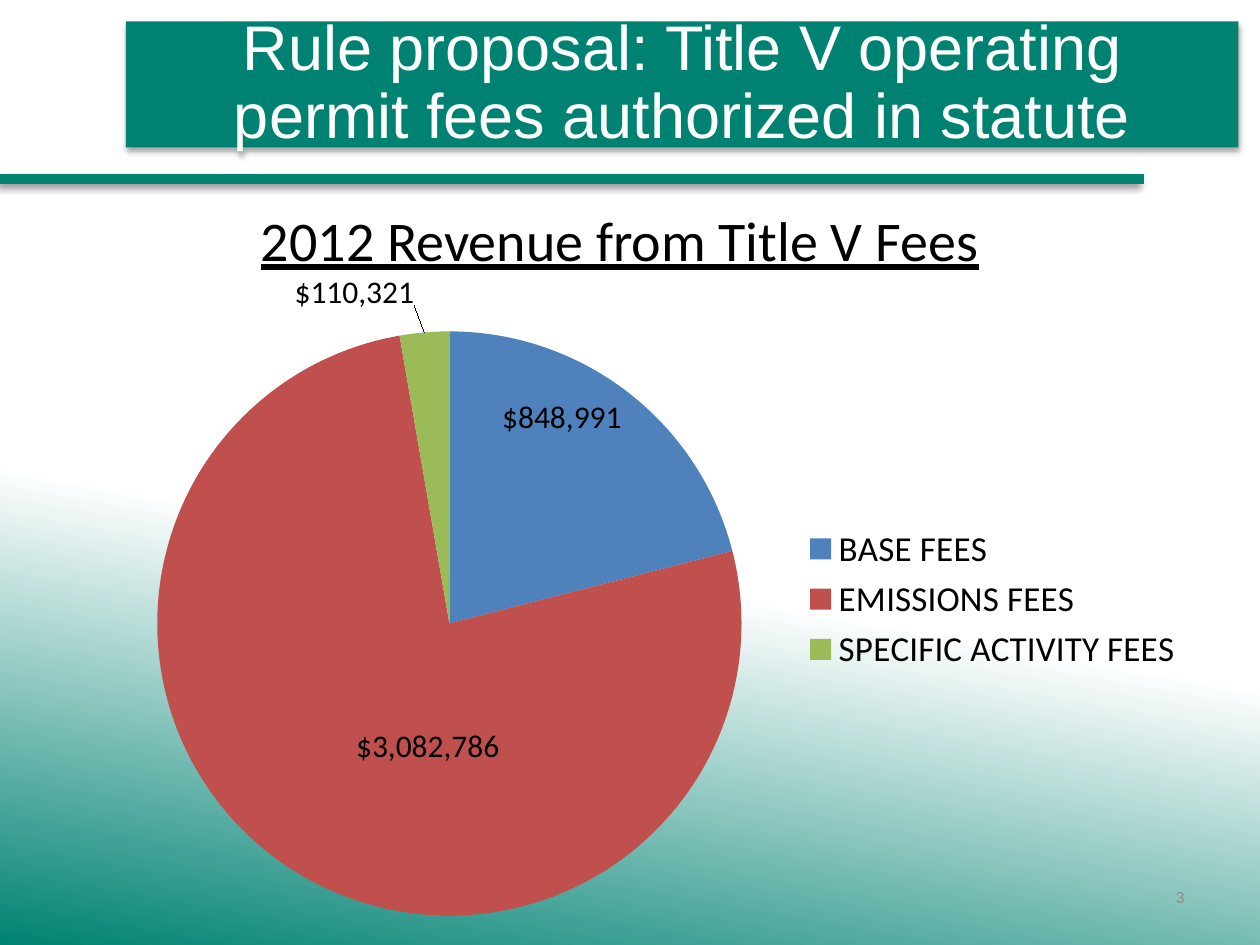
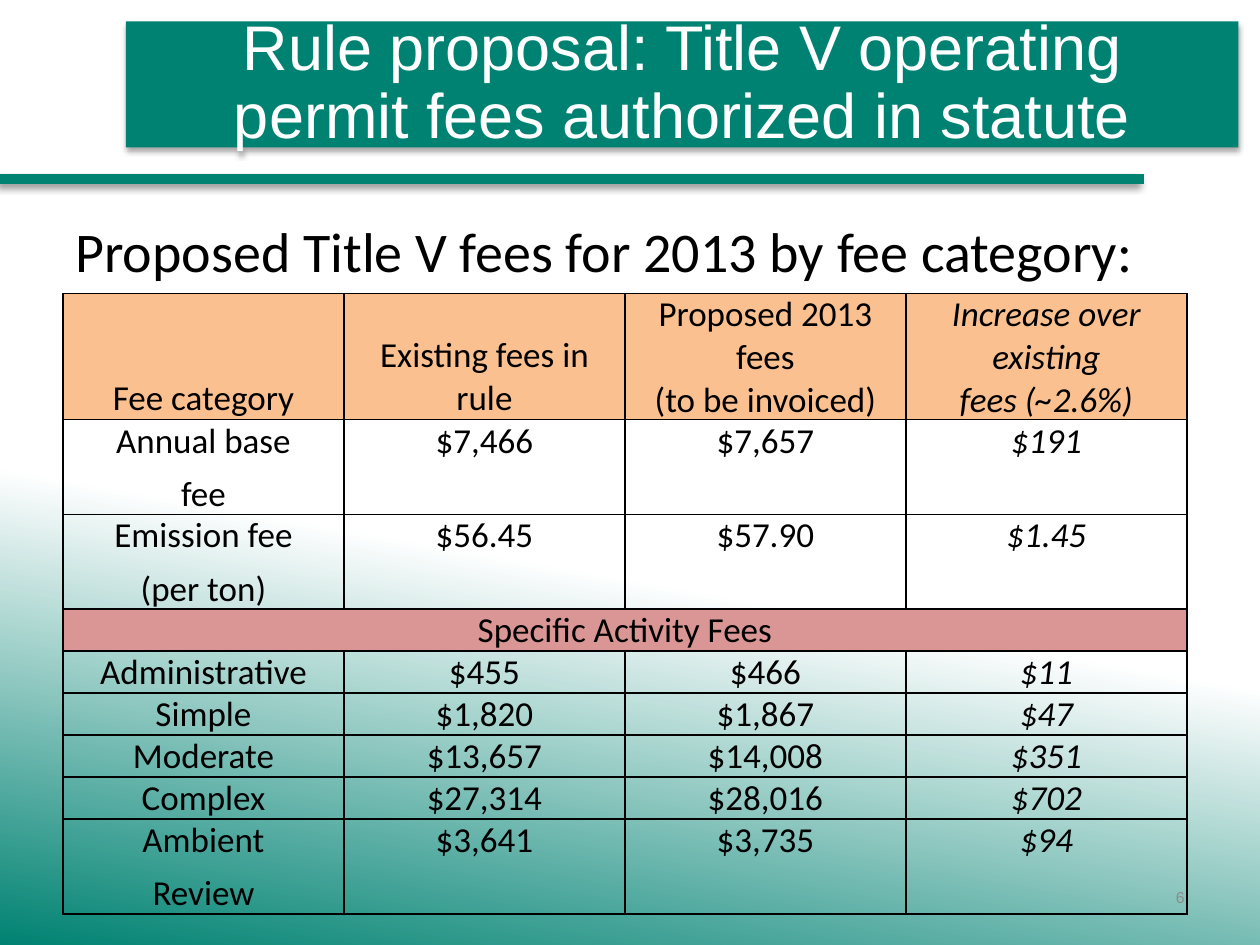
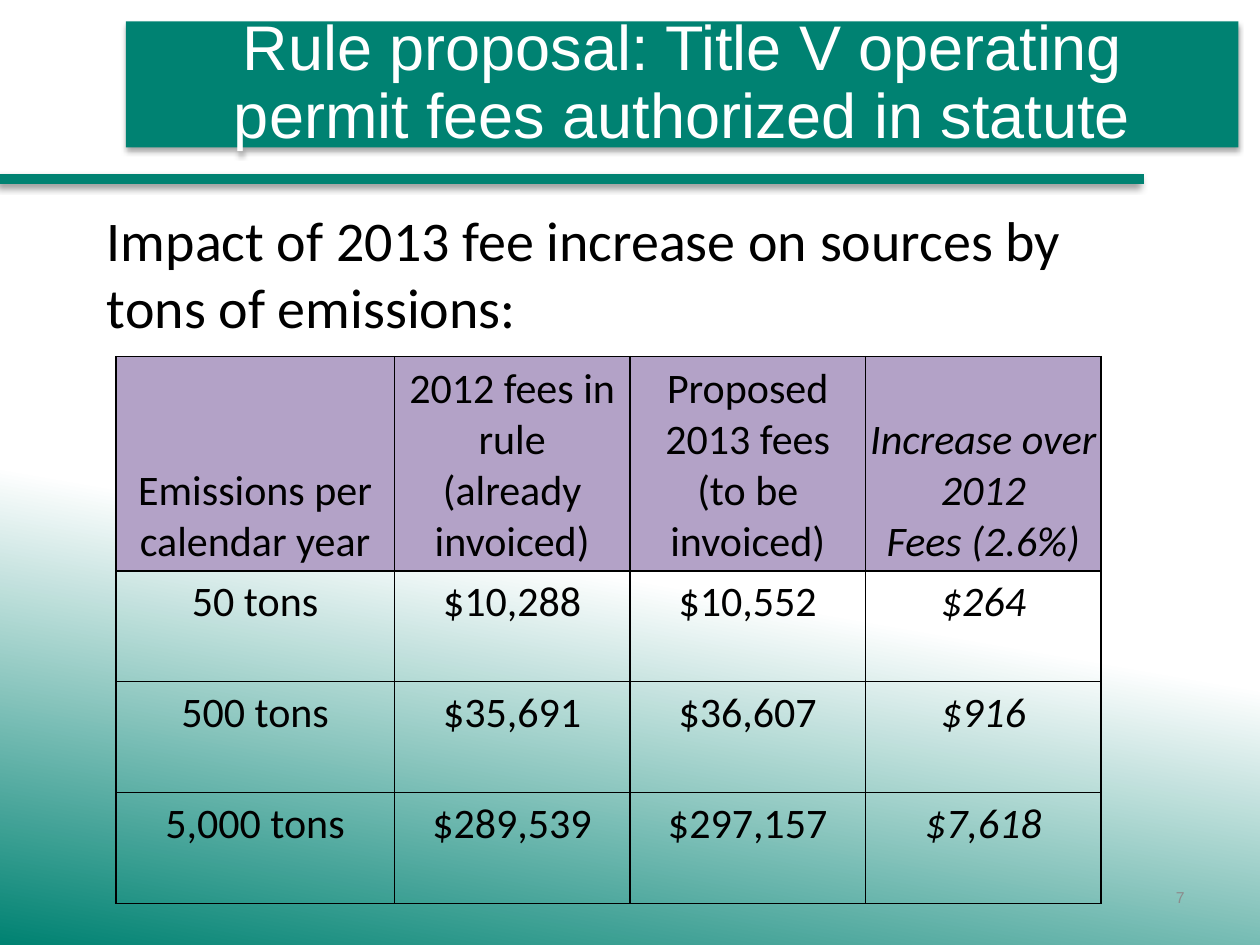
from lxml.etree import SubElement
from pptx import Presentation
from pptx.chart.data import CategoryChartData
from pptx.dml.color import RGBColor
from pptx.enum.chart import XL_CHART_TYPE, XL_LABEL_POSITION, XL_LEGEND_POSITION
from pptx.enum.shapes import MSO_CONNECTOR, MSO_SHAPE
from pptx.enum.text import MSO_ANCHOR, PP_ALIGN
from pptx.oxml import parse_xml
from pptx.oxml.ns import nsdecls, qn
from pptx.util import Inches, Pt

# Shared look
TEAL, WHITE, BLACK, GRAY = "008272", "FFFFFF", "000000", "8C8C8C"
PEACH, ROSE, LILAC = "FAC090", "D99694", "B3A2C7"
TITLE_FONT, BODY_FONT = "Arial", "Calibri"
TITLE = "Rule proposal: Title V operating permit fees authorized in statute"
MONEY = '"$"#,##0'

# Fee name, value, slice colour, label place and label shift (part of chart size)
REVENUE = [
    ("BASE FEES", 848991, "4F81BD", XL_LABEL_POSITION.CENTER, (0.02, -0.14)),
    ("EMISSIONS FEES", 3082786, "C0504D", XL_LABEL_POSITION.CENTER, (0.05, 0)),
    ("SPECIFIC ACTIVITY FEES", 110321, "9BBB59", XL_LABEL_POSITION.OUTSIDE_END, (-0.06, -0.03)),
]

FEES_BY_CATEGORY = [
    ["Fee category", "Existing fees in rule", "Proposed 2013 fees\n(to be invoiced)",
     "Increase over\nexisting\nfees (~2.6%)"],
    ["Annual base\nfee", "$7,466", "$7,657", "$191"],
    ["Emission fee\n(per ton)", "$56.45", "$57.90", "$1.45"],
    ["Specific Activity Fees"],
    ["Administrative", "$455", "$466", "$11"],
    ["Simple", "$1,820", "$1,867", "$47"],
    ["Moderate", "$13,657", "$14,008", "$351"],
    ["Complex", "$27,314", "$28,016", "$702"],
    ["Ambient\nReview", "$3,641", "$3,735", "$94"],
]

FEES_BY_TONS = [
    ["Emissions per\ncalendar year", "2012 fees in rule\n(already invoiced)",
     "Proposed 2013 fees\n(to be invoiced)", "Increase over\n2012\nFees (2.6%)"],
    ["50 tons", "$10,288", "$10,552", "$264"],
    ["500 tons", "$35,691", "$36,607", "$916"],
    ["5,000 tons", "$289,539", "$297,157", "$7,618"],
]


def color(value):
    return RGBColor.from_string(value)


def write(frame, text, size=32, font=BODY_FONT, fill=BLACK, align=PP_ALIGN.LEFT,
          italic=False, underline=False, line_spacing=None, space_after=None):
    """Fill a text frame: a new line starts a paragraph, a vertical tab breaks a line."""
    frame.word_wrap = True
    for index, line in enumerate(text.split("\n")):
        para = frame.add_paragraph() if index else frame.paragraphs[0]
        para.text = line
        para.alignment = align
        para.line_spacing = line_spacing
        para.space_after = space_after
        for span in para.runs:
            span.font.name = font
            span.font.size = Pt(size)
            span.font.italic = italic
            span.font.underline = underline
            span.font.color.rgb = color(fill)


def set_margins(target, left, top, right, bottom):
    target.margin_left, target.margin_top = Inches(left), Inches(top)
    target.margin_right, target.margin_bottom = Inches(right), Inches(bottom)


def cast_shadow(shape, opacity, blur, distance, angle):
    shape.element.spPr.append(parse_xml(
        f'<a:effectLst {nsdecls("a")}><a:outerShdw blurRad="{Pt(blur)}" dist="{Pt(distance)}" '
        f'dir="{angle * 60000}" algn="ctr" rotWithShape="0"><a:srgbClr val="{BLACK}">'
        f'<a:alpha val="{opacity * 1000}"/></a:srgbClr></a:outerShdw></a:effectLst>'))


def add_text(page, text, left, top, width, height, anchor=MSO_ANCHOR.TOP, **style):
    box = page.shapes.add_textbox(Inches(left), Inches(top), Inches(width), Inches(height))
    box.text_frame.vertical_anchor = anchor
    write(box.text_frame, text, **style)


def add_page(deck, number):
    """Blank page with the shared background, title band, rule and number."""
    page = deck.slides.add_slide(deck.slide_layouts[6])
    fill = page.background.fill
    fill.gradient()
    fill.gradient_angle = 260
    for stop, position, shade in zip(fill.gradient_stops, (0.59, 1), (WHITE, TEAL)):
        stop.position = position
        stop.color.rgb = color(shade)

    band = page.shapes.add_shape(MSO_SHAPE.RECTANGLE, Inches(1), Inches(0.17),
                                 Inches(8.83), Inches(1))
    band.fill.solid()
    band.fill.fore_color.rgb = color(TEAL)
    band.line.fill.background()
    cast_shadow(band, 35, 3.1, 1.8, 90)
    set_margins(band.text_frame, 0.21, 0.21, 0.21, 0.21)
    band.text_frame.vertical_anchor = MSO_ANCHOR.MIDDLE
    write(band.text_frame, TITLE, size=36, font=TITLE_FONT, fill=WHITE,
          align=PP_ALIGN.CENTER, line_spacing=0.9)

    rule = page.shapes.add_connector(MSO_CONNECTOR.STRAIGHT, 0, Inches(1.42),
                                     Inches(9.08), Inches(1.42))
    rule.line.color.rgb = color(TEAL)
    rule.line.width = Pt(6)
    cast_shadow(rule, 40, 4, 3, 135)

    add_text(page, str(number), 7.17, 6.92, 2.33, 0.4, anchor=MSO_ANCHOR.MIDDLE,
             size=9, font=TITLE_FONT, fill=GRAY, align=PP_ALIGN.RIGHT)
    return page


def manual_layout(**values):
    """Chart layout element; the keywords are its children in order."""
    layout = parse_xml(f'<c:layout {nsdecls("c")}><c:manualLayout/></c:layout>')
    for name, value in values.items():
        SubElement(layout[0], qn(f"c:{name}")).set("val", str(value))
    return layout


def add_revenue_pie(page):
    data = CategoryChartData(number_format=MONEY)
    data.categories = [row[0] for row in REVENUE]
    data.add_series("Series 1", [row[1] for row in REVENUE])
    chart = page.shapes.add_chart(XL_CHART_TYPE.PIE, Inches(0.33), Inches(2.17),
                                  Inches(9.17), Inches(5.17), data).chart
    chart.has_title = False
    chart.font.name = BODY_FONT
    chart.font.size = Pt(10)
    chart.font.color.rgb = color(BLACK)
    chart.has_legend = True
    chart.legend.position = XL_LEGEND_POSITION.RIGHT
    chart.legend.include_in_layout = False
    chart.legend.font.size = Pt(20)

    plot = chart.plots[0]
    plot.vary_by_categories = True
    series = plot.series[0]
    labels = series.data_labels
    labels.show_value = True
    labels.number_format = MONEY
    labels.number_format_is_linked = False
    labels.font.size = Pt(18)
    for index, (_, _, shade, place, (shift_x, shift_y)) in enumerate(REVENUE):
        point = series.points[index]
        point.format.fill.solid()
        point.format.fill.fore_color.rgb = color(shade)
        point.data_label.font.size = Pt(18)
        point.data_label.position = place
    for item, row in zip(series.data_labels._element.findall(qn("c:dLbl")), REVENUE):
        item.insert(1, manual_layout(x=row[4][0], y=row[4][1]))

    area = chart._chartSpace.chart.plotArea
    for layout in area.findall(qn("c:layout")):
        area.remove(layout)
    area.insert(0, manual_layout(layoutTarget="inner", xMode="edge", yMode="edge",
                                 x=0.055, y=0.089, w=0.596, h=0.897))


def style_cell(cell, fill, margins, anchor):
    properties = cell._tc.get_or_add_tcPr()
    for side in ("lnL", "lnR", "lnT", "lnB"):
        properties.append(parse_xml(
            f'<a:{side} {nsdecls("a")} w="{Pt(1)}"><a:solidFill><a:srgbClr val="{BLACK}"/>'
            f'</a:solidFill></a:{side}>'))
    if fill:
        cell.fill.solid()
        cell.fill.fore_color.rgb = color(fill)
    else:
        cell.fill.background()
    set_margins(cell, *margins)
    cell.vertical_anchor = anchor


def add_fee_table(page, rows, left, top, widths, heights, header_fill, margins, size,
                  space_after=None):
    """Bordered fee table; a row with a single text spans all columns."""
    table = page.shapes.add_table(len(rows), len(widths), Inches(left), Inches(top),
                                  Inches(sum(widths)), Inches(sum(heights))).table
    table.first_row = table.horz_banding = False
    for column, width in zip(table.columns, widths):
        column.width = Inches(width)
    for row_index, (texts, height) in enumerate(zip(rows, heights)):
        table.rows[row_index].height = Inches(height)
        header = row_index == 0
        section = len(texts) == 1
        fill = header_fill if header else ROSE if section else None
        anchor = MSO_ANCHOR.BOTTOM if header else MSO_ANCHOR.TOP
        for column_index in range(len(widths)):
            style_cell(table.cell(row_index, column_index), fill, margins, anchor)
        if section:
            table.cell(row_index, 0).merge(table.cell(row_index, len(widths) - 1))
        for column_index, text in enumerate(texts):
            write(table.cell(row_index, column_index).text_frame, text, size=size,
                  align=PP_ALIGN.CENTER, italic=column_index == len(widths) - 1,
                  space_after=None if header else space_after)


def main():
    deck = Presentation()
    deck.slide_width, deck.slide_height = Inches(10), Inches(7.5)

    # Revenue by kind of fee
    page = add_page(deck, 3)
    add_text(page, "2012 Revenue from Title V Fees", 0.17, 1.58, 9.5, 1.72,
             align=PP_ALIGN.CENTER, underline=True)
    add_revenue_pie(page)

    # Proposed fees by category
    page = add_page(deck, 6)
    add_fee_table(page, FEES_BY_CATEGORY, 0.5, 2.33, [2.23] * 4,
                  [0.97, 0.75, 0.75] + [0.31] * 5 + [0.75],
                  PEACH, (0.07, 0, 0.07, 0), 20, space_after=Pt(6))
    add_text(page, "Proposed Title V fees for 2013 by fee category:", 0.5, 1.67, 9.25, 1.18)

    # Impact by tons of emissions
    page = add_page(deck, 7)
    add_fee_table(page, FEES_BY_TONS, 0.92, 2.83, [2.21] + [1.87] * 3, [1.7] + [0.88] * 3,
                  LILAC, (0.02, 0.05, 0.02, 0.02), 24)
    add_text(page, "Impact of 2013 fee increase on sources by\vtons of emissions:",
             0.75, 1.58, 8.75, 1.18)

    deck.save("out.pptx")


if __name__ == "__main__":
    main()
